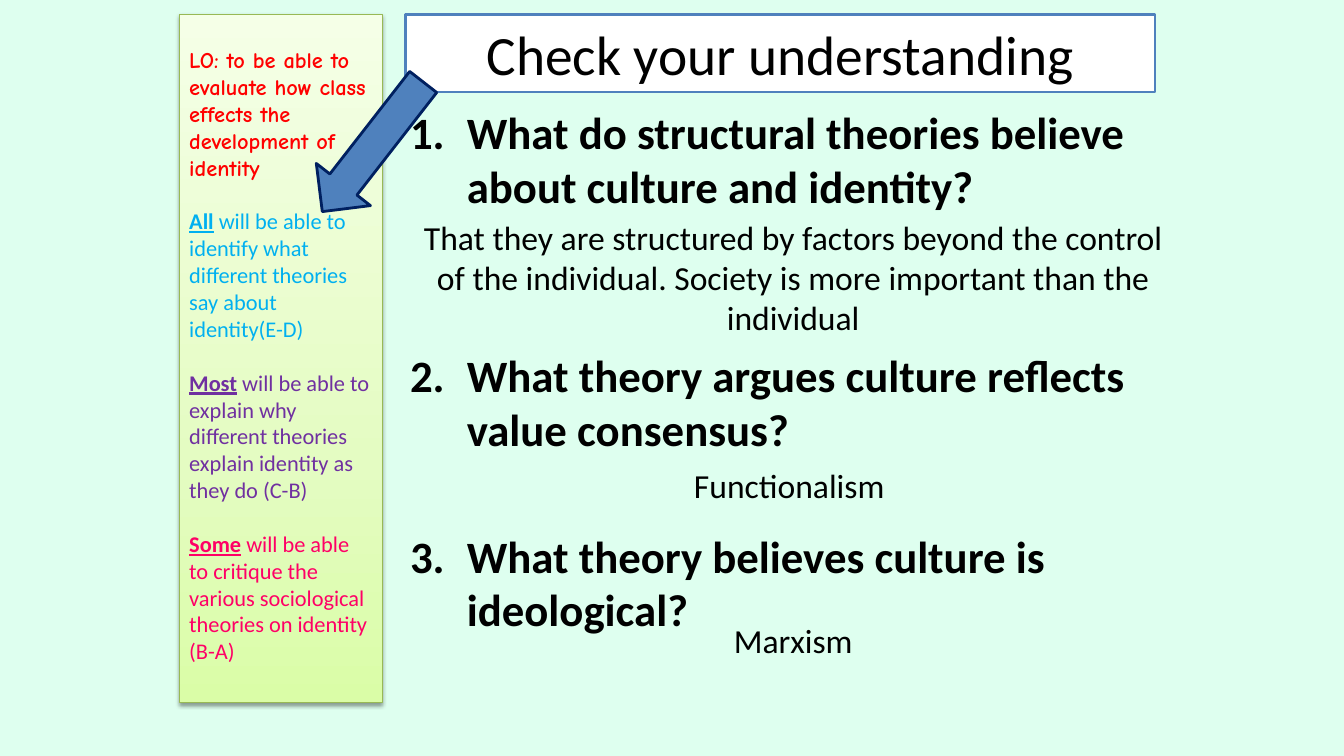
from copy import deepcopy

from lxml.etree import SubElement
from pptx import Presentation
from pptx.dml.color import RGBColor
from pptx.enum.shapes import MSO_SHAPE as Preset
from pptx.enum.text import MSO_ANCHOR as Anchor, MSO_AUTO_SIZE as AutoSize, PP_ALIGN as Align
from pptx.oxml.ns import qn
from pptx.util import Cm, Pt

COLORS = {
    "background": "DEFFEF",
    "white": "FFFFFF",
    "black": "000000",
    "blue": "4F81BD",
    "navy": "002060",
    "sidebar_line": "98B955",
    "objective": "FF0000",
    "all": "00B0F0",
    "most": "7030A0",
    "some": "FF0066",
}
SIDEBAR_GRADIENT = [(0, "DAFDA7"), (0.35, "E4FCC2"), (1, "F5FFE7")]

OBJECTIVE = "LO: to be able to evaluate how class effects the development of identity"
OUTCOMES = [
    ("All", " will be able to identify what different theories say about identity(E-D)", "all"),
    ("Most", " will be able to explain why different theories explain identity as they do (C-B)", "most"),
    ("Some", " will be able to critique the various sociological theories on identity (B-A)", "some"),
]
QUESTIONS = [
    ("What do structural theories believe about culture and identity?", 6.4),
    ("What theory argues culture reflects value consensus?", 97),
    ("What theory believes culture is ideological?", 52),
]
ANSWERS = [
    ("That they are structured by factors beyond the control of the individual. "
     "Society is more important than the individual", 0.26, 2.82, 3.33),
    ("Functionalism", 0.16, 9.07, 1.27),
    ("Marxism", 0.26, 12.98, 1.27),
]


def rgb(name):
    return RGBColor.from_string(COLORS[name])


def place(shape, box):
    shape.left, shape.top, shape.width, shape.height = (Cm(length) for length in box)


def outline(shape, color, width):
    shape.line.color.rgb = rgb(color)
    shape.line.width = Pt(width)


def add_run(paragraph, text, size, color="black", font="Calibri", bold=False, underline=False):
    run = paragraph.add_run()
    run.text = text
    run.font.size = Pt(size)
    run.font.name = font
    run.font.color.rgb = rgb(color)
    run.font.bold = bold
    run.font.underline = underline


def next_paragraph(frame, index):
    return frame.add_paragraph() if index else frame.paragraphs[0]


def add_title(slide, box):
    title = slide.shapes.title
    place(title, box)
    title.fill.solid()
    title.fill.fore_color.rgb = rgb("white")
    outline(title, "blue", 2)
    frame = title.text_frame
    frame.auto_size = AutoSize.NONE
    frame.vertical_anchor = Anchor.MIDDLE
    paragraph = frame.paragraphs[0]
    paragraph.alignment = Align.CENTER
    add_run(paragraph, "Check your understanding", 39.6)


def add_questions(slide, box):
    body = slide.placeholders[1]
    place(body, box)
    frame = body.text_frame
    frame.auto_size = AutoSize.NONE
    for index, (question, gap) in enumerate(QUESTIONS):
        paragraph = next_paragraph(frame, index)
        paragraph.space_before = Pt(gap)
        properties = paragraph._p.get_or_add_pPr()
        properties.set("marL", str(Cm(1.43)))
        properties.set("indent", str(-Cm(1.43)))
        SubElement(properties, qn("a:buFont"), typeface="+mj-lt")
        SubElement(properties, qn("a:buAutoNum"), type="arabicPeriod")
        add_run(paragraph, question, 32, bold=True)


def add_answers(slide, box):
    left, top, width, _ = box
    for text, right_shift, down_shift, height in ANSWERS:
        answer = slide.shapes.add_textbox(0, 0, 0, 0)
        place(answer, (left + right_shift, top + down_shift, width + 0.28, height))
        answer.text_frame.word_wrap = True
        paragraph = answer.text_frame.paragraphs[0]
        paragraph.alignment = Align.CENTER
        add_run(paragraph, text, 24)


def add_gradient(shape, stops):
    shape.fill.gradient()
    stop_list = shape._element.spPr.find(".//" + qn("a:gsLst"))
    stop_list.append(deepcopy(stop_list[0]))
    for stop, (position, color) in zip(shape.fill.gradient_stops, stops):
        stop.position = position
        stop.color.rgb = RGBColor.from_string(color)
    shape.fill.gradient_angle = 90


def add_shadow(shape):
    shape.shadow.inherit = False
    effects = shape._element.spPr.find(qn("a:effectLst"))
    shadow = SubElement(effects, qn("a:outerShdw"), blurRad=str(Pt(3.1)), dist=str(Pt(1.6)),
                        dir="5400000", rotWithShape="0")
    color = SubElement(shadow, qn("a:srgbClr"), val=COLORS["black"])
    SubElement(color, qn("a:alpha"), val="38000")


def add_sidebar(slide, box):
    sidebar = slide.shapes.add_shape(Preset.RECTANGLE, 0, 0, 0, 0)
    place(sidebar, box)
    add_gradient(sidebar, SIDEBAR_GRADIENT)
    outline(sidebar, "sidebar_line", 0.75)
    add_shadow(sidebar)
    frame = sidebar.text_frame
    frame.word_wrap = True
    frame.vertical_anchor = Anchor.TOP
    frame.margin_top = Cm(0.81)
    paragraph = frame.paragraphs[0]
    paragraph.alignment = Align.LEFT
    add_run(paragraph, OBJECTIVE, 16, "objective", "Comic Neue", bold=True)
    for group, outcome, color in OUTCOMES:
        paragraph = frame.add_paragraph()
        paragraph.alignment = Align.LEFT
        paragraph.space_before = Pt(19.2)
        add_run(paragraph, group, 16, color, bold=True, underline=True)
        add_run(paragraph, outcome, 16, color)


def add_arrow(slide, box):
    arrow = slide.shapes.add_shape(Preset.DOWN_ARROW, 0, 0, 0, 0)
    place(arrow, box)
    arrow.rotation = 37.9
    arrow.shadow.inherit = False
    arrow.fill.solid()
    arrow.fill.fore_color.rgb = rgb("blue")
    outline(arrow, "navy", 2)


def main():
    presentation = Presentation()
    presentation.slide_width = Cm(33.87)
    presentation.slide_height = Cm(19.05)
    slide = presentation.slides.add_slide(presentation.slide_layouts[1])
    slide.background.fill.solid()
    slide.background.fill.fore_color.rgb = rgb("background")
    question_box = (10.08, 2.51, 19.02, 14.5)
    add_title(slide, (10.21, 0.36, 18.9, 1.96))
    add_questions(slide, question_box)
    add_sidebar(slide, (4.52, 0.36, 5.11, 17.35))
    add_answers(slide, question_box)
    add_arrow(slide, (8.53, 1.63, 1.73, 4.14))
    presentation.save("out.pptx")


if __name__ == "__main__":
    main()
